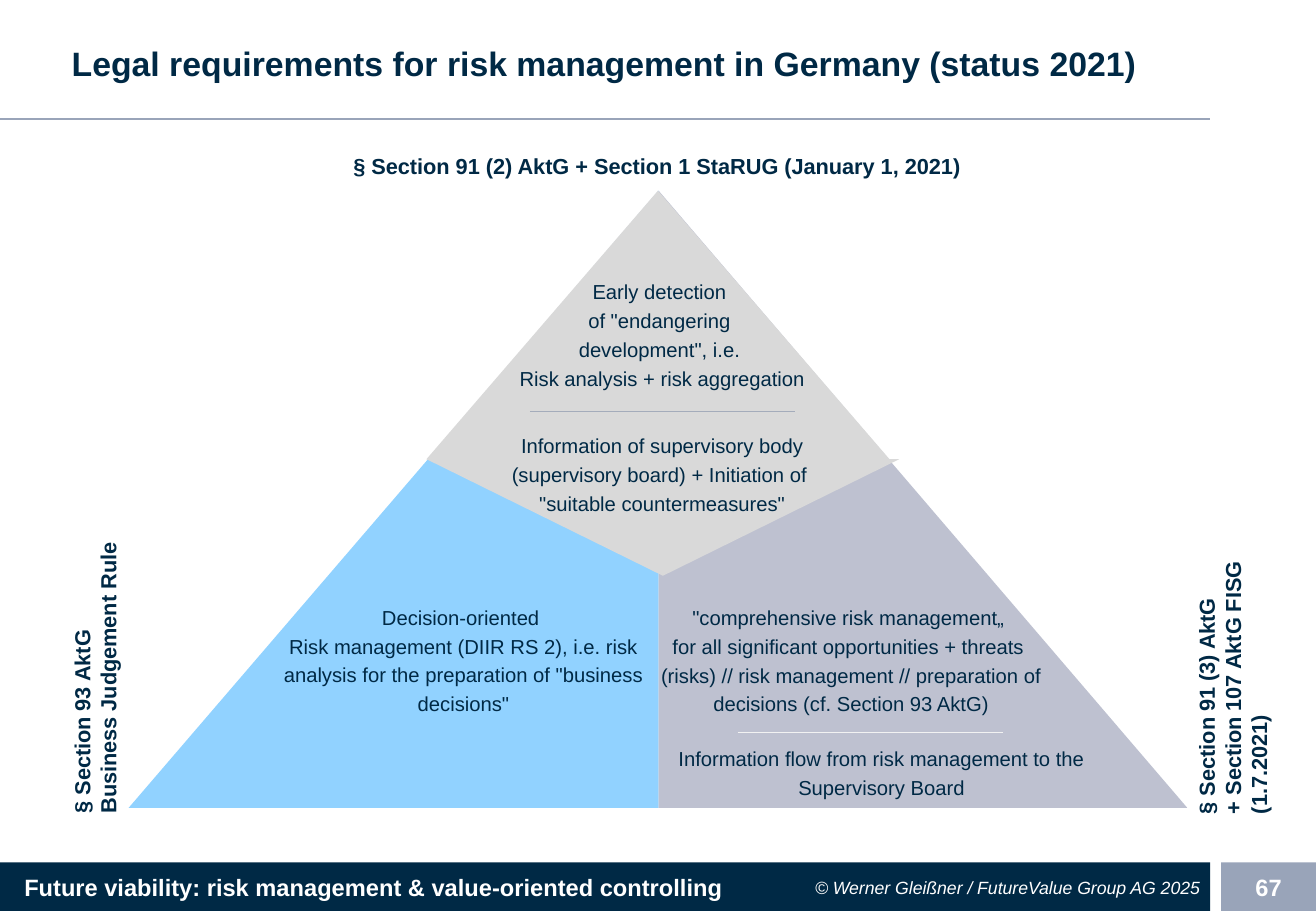
from dataclasses import dataclass

from lxml.etree import SubElement
from pptx import Presentation
from pptx.dml.color import RGBColor
from pptx.enum.shapes import MSO_CONNECTOR, MSO_SHAPE
from pptx.enum.text import MSO_ANCHOR as ANCHOR, MSO_AUTO_SIZE as AUTO, PP_ALIGN as ALIGN
from pptx.oxml.ns import qn
from pptx.slide import Slide
from pptx.text.text import TextFrame
from pptx.util import Inches, Length, Pt

NAVY = RGBColor(0x00, 0x29, 0x45)
SLATE = RGBColor(0x99, 0xA4, 0xB9)
BLUE = RGBColor(0x91, 0xD2, 0xFF)
LILAC = RGBColor(0xBE, 0xC1, 0xD0)
GREY = RGBColor(0xD9, 0xD9, 0xD9)
RULE_GREY = RGBColor(0xA4, 0xAC, 0xBB)
RULE_LIGHT = RGBColor(0xF2, 0xF2, 0xF2)
WHITE = RGBColor(0xFF, 0xFF, 0xFF)

Box = tuple[float, float, float, float]
NO_INSET = (0, 0)
BAR_INSET = (0.08, 0.04)
LABEL_INSET = (0.1, 0.05)


@dataclass
class Style:
    size: float = 12
    color: RGBColor = NAVY
    bold: bool = False
    italic: bool = False
    align: ALIGN = ALIGN.CENTER
    anchor: ANCHOR = ANCHOR.TOP
    inset: tuple[float, float] = NO_INSET
    spacing: float | Length | None = None
    gap: float = 0
    grow: bool = False


@dataclass
class Triangle:
    box: Box
    fill: RGBColor
    apex: float = 0.5
    rotation: float = 0


@dataclass
class Label:
    box: Box
    text: str
    style: Style
    rotation: float = 0


@dataclass
class Rule:
    x1: float
    x2: float
    y: float
    color: RGBColor
    width: float = 0.75


TITLE = Style(20, bold=True, align=ALIGN.LEFT, anchor=ANCHOR.MIDDLE, inset=BAR_INSET)
FOOTER = Style(14, WHITE, bold=True, align=ALIGN.LEFT, anchor=ANCHOR.MIDDLE, inset=(0.2, 0.04))
PAGE = Style(14, WHITE, bold=True, anchor=ANCHOR.MIDDLE, inset=BAR_INSET)
CREDIT = Style(10.5, WHITE, italic=True, align=ALIGN.RIGHT, anchor=ANCHOR.MIDDLE, inset=BAR_INSET)
LAW = Style(12.9, bold=True, inset=LABEL_INSET, grow=True)
SIDE_LAW = Style(12.9, bold=True, align=ALIGN.LEFT, inset=LABEL_INSET, grow=True)
EARLY = Style(spacing=1.2, gap=11.1)
DUTY = Style(anchor=ANCHOR.MIDDLE, spacing=Pt(17), gap=11.1)
SCOPE = Style(inset=LABEL_INSET, spacing=Pt(17), gap=6, grow=True)

TRIANGLES = [
    Triangle((1.06, 1.57, 4.36, 5.08), BLUE, apex=1),
    Triangle((5.42, 1.57, 4.35, 5.08), LILAC, apex=0),
    Triangle((3.51, 1.57, 3.81, 2.21), GREY),
    Triangle((3.51, 3.78, 3.89, 0.96), GREY, rotation=180),
]
RULES = [
    Rule(0, 9.96, 0.98, SLATE, 1.5),
    Rule(4.36, 6.54, 3.39, RULE_GREY),
    Rule(6.07, 8.25, 6.03, RULE_LIGHT),
]
# "\v" breaks a line, "\n" starts a paragraph
LABELS = [
    Label((5.63, 7.1, 4.33, 0.41), "© Werner Gleißner / FutureValue Group AG 2025", CREDIT),
    Label((3.89, 2.26, 3.12, 2.34),
          'Early detection \vof "endangering \vdevelopment", i.e. \v'
          "Risk analysis + risk aggregation\n"
          "Information of supervisory body (supervisory board) + Initiation of \v"
          '"suitable countermeasures"', EARLY),
    Label((2.11, 4.45, 3.41, 1.94),
          "Decision-oriented \vRisk management (DIIR RS 2), i.e. risk analysis "
          'for the preparation of "business decisions"', DUTY),
    Label((5.26, 4.9, 3.49, 1.05),
          '"comprehensive risk management„ \v'
          "for all significant opportunities + threats \v"
          "(risks) // risk management // preparation of decisions (cf. Section 93 AktG)", SCOPE),
    Label((5.17, 6.11, 4.17, 0.47),
          "Information flow from risk management to the Supervisory Board", DUTY),
    Label((2.62, 1.21, 5.57, 0.32),
          "§ Section 91 (2) AktG + Section 1 StaRUG (January 1, 2021)", LAW),
    Label((-0.52, 5.22, 2.61, 0.54), "§ Section 93 AktG\nBusiness Judgement Rule", SIDE_LAW, 270),
    Label((8.5, 4.99, 3.08, 0.54),
          "§ Section 91 (3) AktG\n+ Section 107 AktG FISG (1.7.2021)", SIDE_LAW, 270),
]


def inches(box: Box) -> list[Length]:
    return [Inches(v) for v in box]


def write(tf: TextFrame, text: str, style: Style) -> None:
    tf.text = text
    tf.word_wrap = True
    tf.auto_size = AUTO.SHAPE_TO_FIT_TEXT if style.grow else AUTO.NONE
    tf.vertical_anchor = style.anchor
    tf.margin_left = tf.margin_right = Inches(style.inset[0])
    tf.margin_top = tf.margin_bottom = Inches(style.inset[1])
    for i, p in enumerate(tf.paragraphs):
        p.alignment = style.align
        p.line_spacing = style.spacing
        p.space_before = Pt(style.gap if i else 0)
        p.space_after = Pt(style.gap)
        for r in p.runs:
            r.font.name = "Arial"
            r.font.size = Pt(style.size)
            r.font.bold = style.bold
            r.font.italic = style.italic
            r.font.color.rgb = style.color
        # Line breaks take the text size too
        for br in p._p.findall(qn("a:br")):
            SubElement(br, qn("a:rPr"), sz=str(round(style.size * 100)))


def add_bar(s: Slide, box: Box, fill: RGBColor, text: str, style: Style) -> None:
    sp = s.shapes.add_shape(MSO_SHAPE.RECTANGLE, *inches(box))
    sp.shadow.inherit = False
    sp.fill.solid()
    sp.fill.fore_color.rgb = fill
    sp.line.fill.background()
    write(sp.text_frame, text, style)


def add_triangle(s: Slide, tri: Triangle) -> None:
    sp = s.shapes.add_shape(MSO_SHAPE.ISOSCELES_TRIANGLE, *inches(tri.box))
    sp.shadow.inherit = False
    sp.adjustments[0] = tri.apex
    sp.rotation = tri.rotation
    sp.fill.solid()
    sp.fill.fore_color.rgb = tri.fill
    sp.line.fill.background()


def add_rule(s: Slide, rule: Rule) -> None:
    y = Inches(rule.y)
    line = s.shapes.add_connector(MSO_CONNECTOR.STRAIGHT, Inches(rule.x1), y, Inches(rule.x2), y)
    line.line.color.rgb = rule.color
    line.line.width = Pt(rule.width)
    SubElement(line._element.spPr, qn("a:effectLst"))


def add_label(s: Slide, label: Label) -> None:
    sp = s.shapes.add_textbox(*inches(label.box))
    sp.rotation = label.rotation
    write(sp.text_frame, label.text, label.style)


def main() -> None:
    prs = Presentation()
    prs.slide_width, prs.slide_height = Inches(10.83), Inches(7.5)
    s = prs.slides.add_slide(prs.slide_layouts[5])

    # Title
    title = s.shapes.title
    title.left, title.top, title.width, title.height = inches((0.51, 0.16, 9.45, 0.71))
    write(title.text_frame, "Legal requirements for risk management in Germany (status 2021)", TITLE)

    # Footer bars
    add_bar(s, (0, 7.1, 9.96, 0.4), NAVY,
            "Future viability: risk management & value-oriented controlling", FOOTER)
    add_bar(s, (10.05, 7.1, 0.78, 0.4), SLATE, "67", PAGE)

    # Pyramid, rules and texts
    for tri in TRIANGLES:
        add_triangle(s, tri)
    for rule in RULES:
        add_rule(s, rule)
    for label in LABELS:
        add_label(s, label)

    prs.save("out.pptx")


if __name__ == "__main__":
    main()
